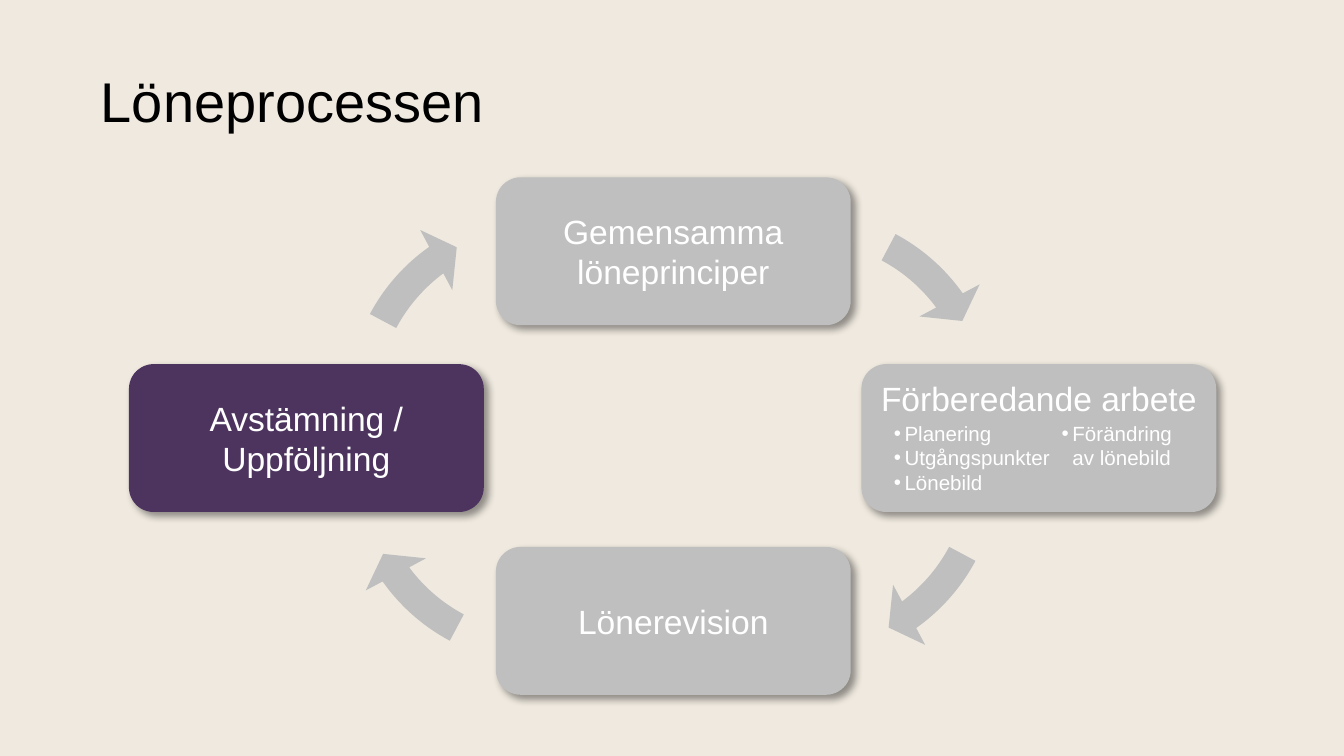
from dataclasses import dataclass

from lxml import etree
from pptx import Presentation
from pptx import util as u
from pptx.dml.color import RGBColor
from pptx.enum import shapes, text
from pptx.oxml import parse_xml
from pptx.oxml.ns import nsdecls, qn


@dataclass(frozen=True)
class Theme:
    font: str = "Arial"
    background: str = "EFE9DF"
    muted: str = "BFBFBF"
    active: str = "4D345F"
    light: str = "FFFFFF"
    dark: str = "000000"
    title_size: int = 30
    step_size: int = 18
    detail_size: int = 11


@dataclass(frozen=True)
class Step:
    label: str
    left: float
    top: float
    fill: str
    inset: float = 0.1
    anchor: text.MSO_ANCHOR = text.MSO_ANCHOR.MIDDLE


@dataclass(frozen=True)
class Details:
    items: tuple[str, ...]
    left: float
    width: float
    height: float


THEME = Theme()
SLIDE_WIDTH = 10
SLIDE_HEIGHT = SLIDE_WIDTH * 9 / 16
STEP_WIDTH, STEP_HEIGHT = 2.64, 1.1
ARROW_SIZE = 3.17
ARROW_LEFT, ARROW_RIGHT = 2.44, 4.4
ARROW_TOP, ARROW_BOTTOM = 1.43, 1.91
QUARTER_TURN, FULL_TURN = 54, 216
BULLET_INDENT = 0.08

STEPS = (
    Step("Avstämning / Uppföljning", 0.96, 2.71, THEME.active, inset=0),
    Step("Lönerevision", 3.69, 4.07, THEME.muted),
    Step("Gemensamma löneprinciper", 3.69, 1.32, THEME.muted),
    Step("Förberedande arbete", 6.41, 2.71, THEME.muted, 0, text.MSO_ANCHOR.TOP),
)
DETAILS = (
    Details(("Planering", "Utgångspunkter", "Lönebild"), 6.65, 1.19, 0.49),
    Details(("Förändring av lönebild",), 7.9, 0.93, 0.62),
)
ARROW_CORNERS = (
    (ARROW_RIGHT, ARROW_BOTTOM),
    (ARROW_LEFT, ARROW_BOTTOM),
    (ARROW_LEFT, ARROW_TOP),
    (ARROW_RIGHT, ARROW_TOP),
)


def inches(*lengths: float) -> list[u.Inches]:
    return [u.Inches(length) for length in lengths]


def set_frame(frame, anchor: text.MSO_ANCHOR, side: float = 0, vertical: float = 0) -> None:
    values = {
        "word_wrap": True,
        "vertical_anchor": anchor,
        "margin_left": u.Inches(side),
        "margin_right": u.Inches(side),
        "margin_top": u.Inches(vertical),
        "margin_bottom": u.Inches(vertical),
    }
    for name, value in values.items():
        setattr(frame, name, value)


def write(paragraph, wording: str, size: int, color: str) -> None:
    run = paragraph.add_run()
    run.text = wording
    for name, value in {"name": THEME.font, "size": u.Pt(size)}.items():
        setattr(run.font, name, value)
    run.font.color.rgb = RGBColor.from_string(color)


def add_filled(slide, preset: shapes.MSO_SHAPE, box: tuple[float, ...], fill: str):
    shape = slide.shapes.add_shape(preset, *inches(*box))
    shape.shadow.inherit = False
    shape.fill.solid()
    shape.fill.fore_color.rgb = RGBColor.from_string(fill)
    shape.line.fill.background()
    return shape


def add_shadow(shape) -> None:
    effects = shape._element.spPr.find(qn("a:effectLst"))
    effects.append(parse_xml(
        f'<a:outerShdw {nsdecls("a")} blurRad="{u.Pt(4)}" dist="{u.Pt(3)}" '
        f'dir="{45 * 60000}" algn="tl" rotWithShape="0">'
        f'<a:srgbClr val="{THEME.dark}"><a:alpha val="40000"/></a:srgbClr></a:outerShdw>'
    ))


def add_title(slide, wording: str) -> None:
    frame = slide.shapes.add_textbox(*inches(0.75, 0.23, 8.18, 1.09)).text_frame
    set_frame(frame, text.MSO_ANCHOR.MIDDLE)
    heading = frame.paragraphs[0]
    heading.line_spacing = 0.9
    write(heading, wording, THEME.title_size, THEME.dark)


def add_step(slide, step: Step) -> None:
    box = (step.left, step.top, STEP_WIDTH, STEP_HEIGHT)
    card = add_filled(slide, shapes.MSO_SHAPE.ROUNDED_RECTANGLE, box, step.fill)
    add_shadow(card)
    set_frame(card.text_frame, step.anchor, step.inset, 0.05)
    label = card.text_frame.paragraphs[0]
    label.alignment = text.PP_ALIGN.CENTER
    write(label, step.label, THEME.step_size, THEME.light)


def add_details(slide, details: Details) -> None:
    box = inches(details.left, 3.13, details.width, details.height)
    frame = slide.shapes.add_textbox(*box).text_frame
    set_frame(frame, text.MSO_ANCHOR.TOP)
    for index, item in enumerate(details.items):
        paragraph = frame.add_paragraph() if index else frame.paragraphs[0]
        properties = paragraph._p.get_or_add_pPr()
        properties.set("marL", str(u.Inches(BULLET_INDENT)))
        properties.set("indent", str(-u.Inches(BULLET_INDENT)))
        etree.SubElement(properties, qn("a:buFont"), typeface=THEME.font)
        etree.SubElement(properties, qn("a:buChar"), char="•")
        write(paragraph, item, THEME.detail_size, THEME.light)


def add_arrow(slide, left: float, top: float, quarter: int) -> None:
    box = (left, top, ARROW_SIZE, ARROW_SIZE)
    arrow = add_filled(slide, shapes.MSO_SHAPE.CIRCULAR_ARROW, box, THEME.muted)
    arrow.rotation = 45
    turn = quarter * QUARTER_TURN
    curve = (0.07, 4.65, 5.51 + turn, (turn - 10.16) % FULL_TURN, 0.08)
    for index, value in enumerate(curve):
        arrow.adjustments[index] = value


def main() -> None:
    deck = Presentation()
    deck.slide_width, deck.slide_height = inches(SLIDE_WIDTH, SLIDE_HEIGHT)
    slide = deck.slides.add_slide(deck.slide_layouts[6])
    slide.background.fill.solid()
    slide.background.fill.fore_color.rgb = RGBColor.from_string(THEME.background)

    add_title(slide, "Löneprocessen")
    for step in STEPS:
        add_step(slide, step)
    for details in DETAILS:
        add_details(slide, details)
    for quarter, (left, top) in enumerate(ARROW_CORNERS):
        add_arrow(slide, left, top, quarter)
    deck.save("out.pptx")


if __name__ == "__main__":
    main()
